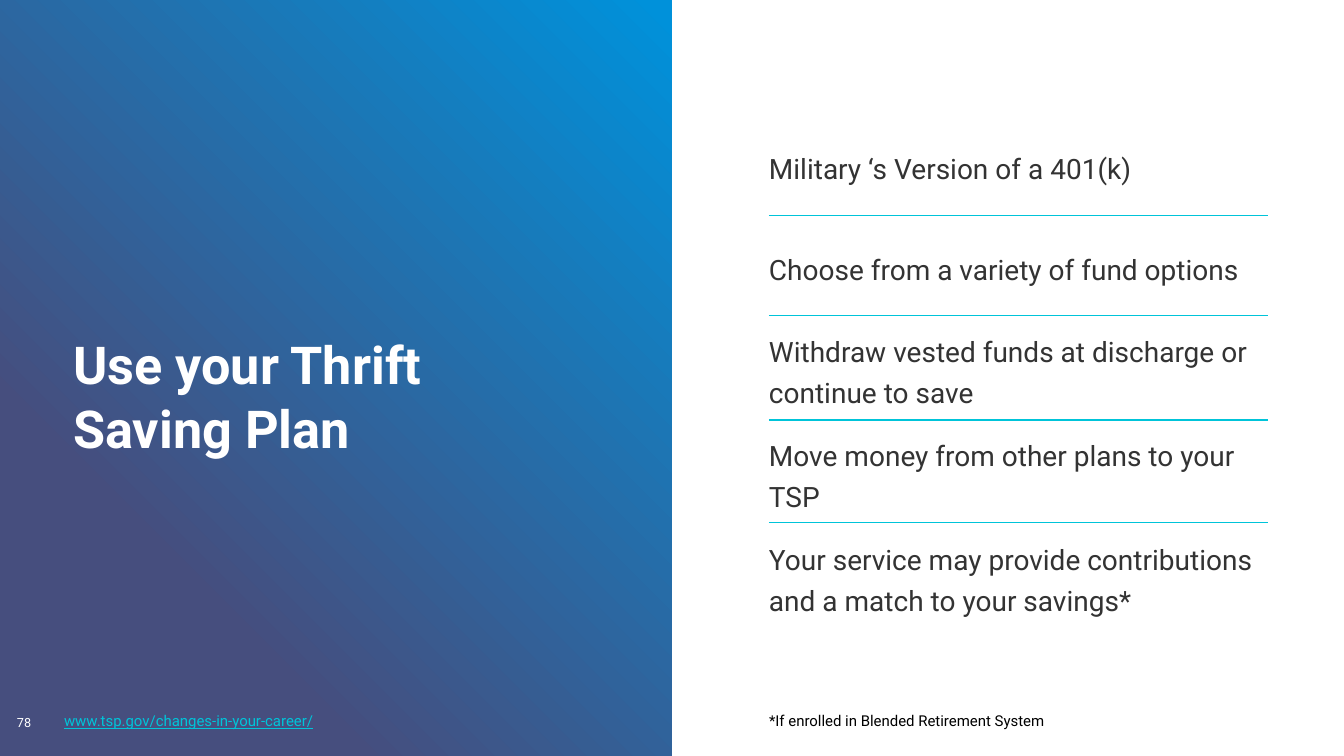
"""Build the Thrift Saving Plan slide."""
import pptx
import pptx.util
import pptx.dml.color
import pptx.enum.shapes
import pptx.enum.text
import lxml.etree

W, H = 1344, 756
PX = 12192000 / W
FONT = "Roboto"
WHITE, BLACK, GREY, CYAN = "FFFFFF", "000000", "333333", "00C4D9"
GRADIENT = [(0.25, "464E7E"), (0.99, "0091DA")]
TITLE = "Use your Thrift\vSaving Plan"
LEFT, WIDTH, ROW_H = 769, 499, 101
POINTS = [
    (114, "Military ‘s Version of a 401(k)"),
    (215, "Choose from a variety of fund options"),
    (318, "Withdraw vested funds at discharge or continue to save"),
    (422, "Move money from other plans to your TSP"),
    (526, "Your service may provide contributions and a match to your savings*"),
]
RULES = [216, 316, 420, 523]
FOOT_TOP, FOOT_H = 688, 42
FOOTERS = [
    (64, 428, "www.tsp.gov/changes-in-your-career/", 10.7, CYAN, True,
     {"line_spacing": 0.9, "space_after": pptx.util.Pt(2)}),
    (17, 46, "78", 9, WHITE, None, {}),
    (LEFT, 428, "*If enrolled in Blended Retirement System", 10.7, BLACK, None,
     {"line_spacing": 0.9, "space_after": pptx.util.Pt(1.5)}),
]
ANCHOR = pptx.enum.text.MSO_ANCHOR


def px(*values):
    """Turn pixels into EMU."""
    return [round(v * PX) for v in values]


def rgb(color):
    """Turn a hex string into a colour."""
    return pptx.dml.color.RGBColor.from_string(color)


def assign(obj, values):
    """Set attributes from a dict."""
    for name, value in values.items():
        setattr(obj, name, value)


def write(tf, text, size, color, font, para, frame):
    """Fill a text frame with one formatted paragraph."""
    assign(tf, {"word_wrap": True, "auto_size": pptx.enum.text.MSO_AUTO_SIZE.NONE, **frame})
    p = tf.paragraphs[0]
    p.text = text
    assign(p, {"alignment": pptx.enum.text.PP_ALIGN.LEFT, **para})
    for r in p.runs:
        assign(r.font, {"name": FONT, "size": pptx.util.Pt(size), **font})
        r.font.color.rgb = rgb(color)


def add_text(s, box, text, size, color, anchor, font, para):
    """Add a text box without margins."""
    margins = {f"margin_{side}": 0 for side in ("left", "top", "right", "bottom")}
    tf = s.shapes.add_textbox(*px(*box)).text_frame
    write(tf, text, size, color, font, para, {"vertical_anchor": anchor, **margins})


def add_panel(s):
    """Add the gradient panel behind everything else."""
    sp = s.shapes.add_shape(pptx.enum.shapes.MSO_SHAPE.RECTANGLE, *px(0, 0, W / 2, H))
    sp.shadow.inherit = False
    sp.line.fill.background()
    sp.fill.gradient()
    sp.fill.gradient_angle = 45
    for stop, (position, color) in zip(sp.fill.gradient_stops, GRADIENT):
        stop.position = position
        stop.color.rgb = rgb(color)
    s.shapes._spTree.insert(2, sp._element)


def add_rule(s, y):
    """Add a thin line between two points."""
    line = s.shapes.add_connector(
        pptx.enum.shapes.MSO_CONNECTOR.STRAIGHT, *px(LEFT, y, LEFT + WIDTH, y))
    line.line.color.rgb = rgb(CYAN)
    line.line.width = pptx.util.Pt(0.75)
    lxml.etree.SubElement(line._element.spPr, pptx.oxml.ns.qn("a:effectLst"))


def main():
    """Build and save the slide."""
    prs = pptx.Presentation()
    prs.slide_width, prs.slide_height = px(W, H)
    s = prs.slides.add_slide(prs.slide_layouts[5])
    add_panel(s)

    title = s.shapes.title
    assign(title, dict(zip(("left", "top", "width", "height"), px(63, 325, 537, 50))))
    write(title.text_frame, TITLE, 37.3, WHITE, {"bold": True},
          {"line_spacing": 1.03}, {"vertical_anchor": ANCHOR.TOP})

    for top, text in POINTS:
        add_text(s, (LEFT, top, WIDTH, ROW_H), text, 20, GREY, ANCHOR.MIDDLE,
                 {}, {"line_spacing": 1.2})
    for y in RULES:
        add_rule(s, y)
    for left, width, text, size, color, underline, para in FOOTERS:
        add_text(s, (left, FOOT_TOP, width, FOOT_H), text, size, color, ANCHOR.BOTTOM,
                 {"underline": underline}, para)
    prs.save("out.pptx")


if __name__ == "__main__":
    main()
